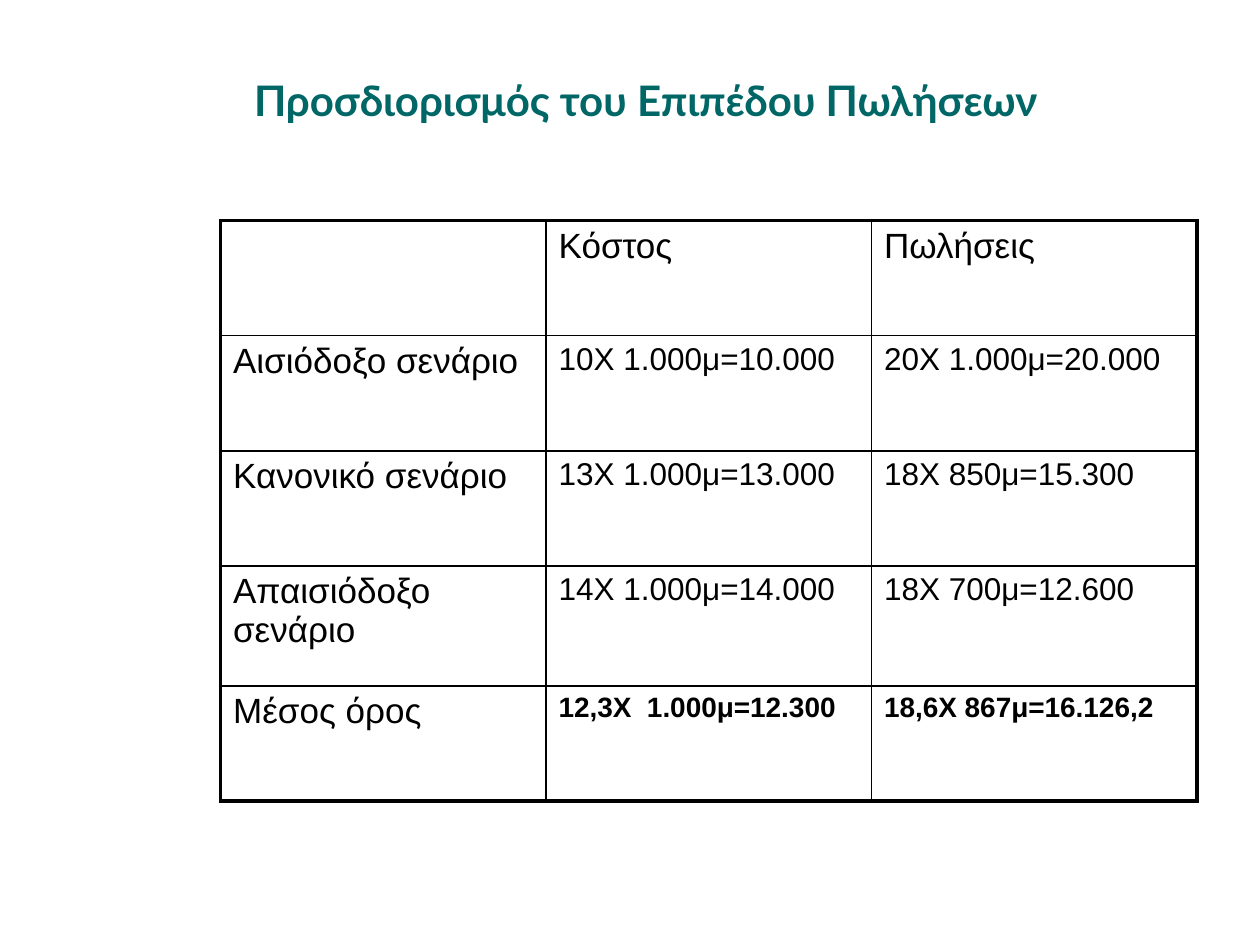
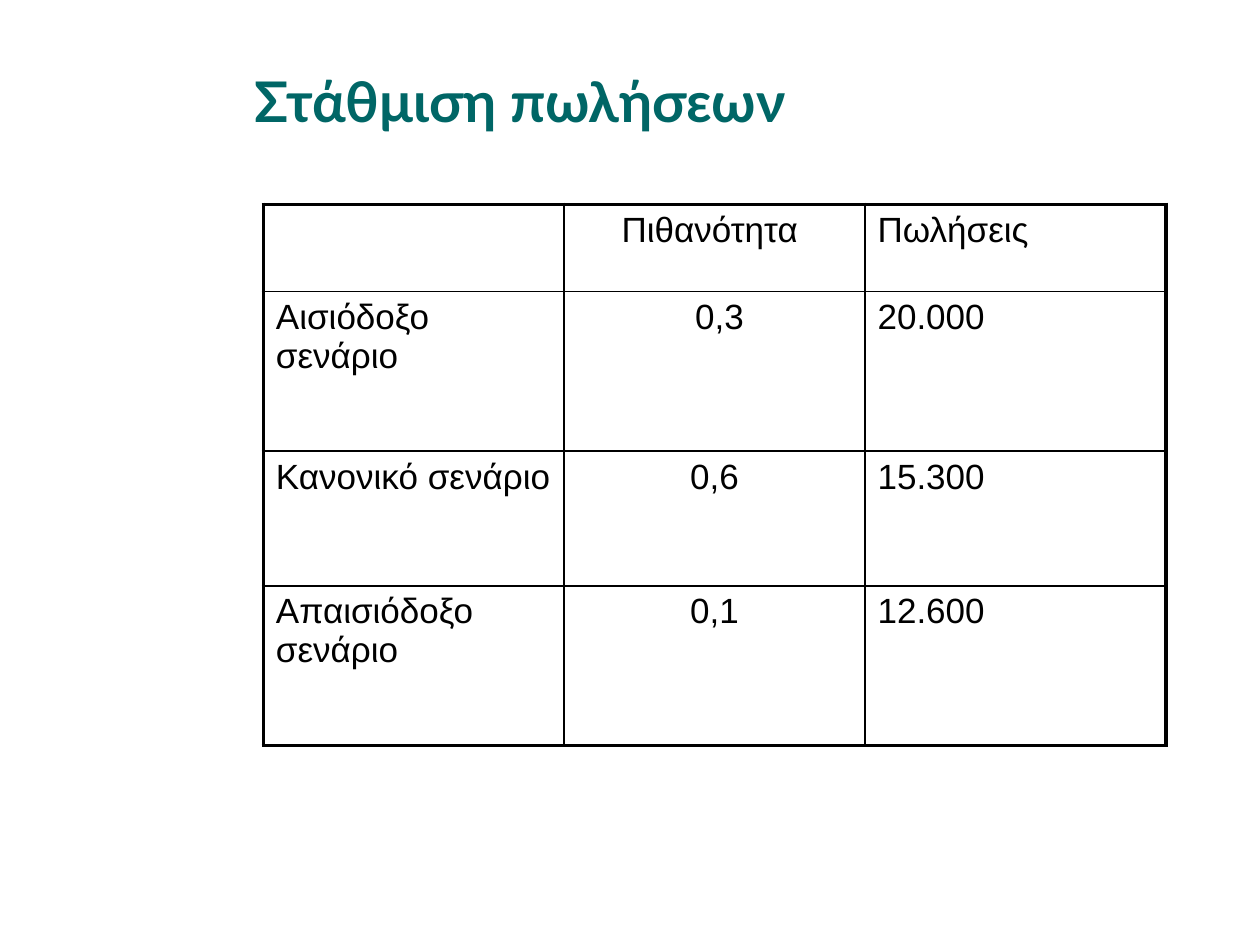
from lxml import etree
from pptx import Presentation
from pptx.dml.color import RGBColor
from pptx.enum import text
from pptx.oxml.ns import qn
from pptx.util import Pt

COLORS = {"title": "006666", "ink": "000000"}
TITLE_BOX = (138, 24, 552, 66)
OUTER, INNER = 2.25, 1
LEFT, CENTER = text.PP_ALIGN.LEFT, text.PP_ALIGN.CENTER

LABEL = {"size": Pt(20), "bold": False}
FIGURE = {"size": Pt(18), "bold": False}
AVERAGE = {"size": Pt(16), "bold": True}


def write(para, words, font_name, color, values, alignment=LEFT):
    para.alignment = alignment
    if not words:
        return
    span = para.add_run()
    span.text = words
    span.font.name = font_name
    span.font.color.rgb = RGBColor.from_string(COLORS[color])
    for name, value in values.items():
        setattr(span.font, name, value)


def add_title(page, box, words, size):
    title = page.shapes.title
    for name, value in zip(("left", "top", "width", "height"), box):
        setattr(title, name, Pt(value))
    frame = title.text_frame
    frame.word_wrap = True
    frame.vertical_anchor = text.MSO_ANCHOR.MIDDLE
    write(frame.paragraphs[0], words, "Lato", "title", {"size": Pt(size), "bold": True})


def add_borders(cell, widths):
    properties = cell._tc.get_or_add_tcPr()
    for side, width in zip("LRTB", widths):
        line = etree.SubElement(properties, qn(f"a:ln{side}"), w=str(Pt(width)))
        fill = etree.SubElement(line, qn("a:solidFill"))
        etree.SubElement(fill, qn("a:srgbClr"), val=COLORS["ink"])
    cell.fill.background()


def add_grid(page, box, heights, rows, style_for, alignments):
    left, top, width = box
    last_row, last_column = len(rows) - 1, len(rows[0]) - 1
    frame = page.shapes.add_table(
        len(rows), len(rows[0]), Pt(left), Pt(top), Pt(width), Pt(sum(heights)))
    table = frame.table
    table.first_row = table.horz_banding = False
    for column in table.columns:
        column.width = Pt(width / len(rows[0]))
    for r, (height, words_in_row) in enumerate(zip(heights, rows)):
        table.rows[r].height = Pt(height)
        for c, words in enumerate(words_in_row):
            cell = table.cell(r, c)
            write(cell.text_frame.paragraphs[0], words, "Arial", "ink",
                  style_for(r, c), alignments[c])
            edges = (c == 0, c == last_column, r == 0, r == last_row)
            add_borders(cell, [OUTER if edge else INNER for edge in edges])


def sales_style(row, column):
    if row == 0 or column == 0:
        return LABEL
    return AVERAGE if row == 4 else FIGURE


def add_sales_page(page):
    add_title(page, TITLE_BOX, "Προσδιορισμός του Επιπέδου Πωλήσεων", 24)
    rows = [
        ("", "Κόστος", "Πωλήσεις"),
        ("Αισιόδοξο σενάριο", "10Χ 1.000μ=10.000", "20Χ 1.000μ=20.000"),
        ("Κανονικό σενάριο", "13Χ 1.000μ=13.000", "18Χ 850μ=15.300"),
        ("Απαισιόδοξο σενάριο", "14Χ 1.000μ=14.000", "18Χ 700μ=12.600"),
        ("Μέσος όρος", "12,3Χ  1.000μ=12.300", "18,6Χ 867μ=16.126,2"),
    ]
    add_grid(page, (126, 126, 558), (65.8, 65.8, 65.8, 68.6, 65.8), rows,
             sales_style, (LEFT, LEFT, LEFT))


def add_weighting_page(page):
    add_title(page, TITLE_BOX, "Στάθμιση πωλήσεων", 32)
    rows = [
        ("", "Πιθανότητα ", "Πωλήσεις"),
        ("Αισιόδοξο σενάριο", " 0,3", "20.000"),
        ("Κανονικό σενάριο", "0,6", "15.300"),
        ("Απαισιόδοξο σενάριο", "0,1", "12.600"),
    ]
    add_grid(page, (150.5, 116.8, 515.7), (49.8, 91.2, 77, 91.2), rows,
             lambda row, column: LABEL, (LEFT, CENTER, LEFT))


def main():
    deck = Presentation()
    deck.slide_width, deck.slide_height = Pt(720), Pt(540)
    for fill_page in (add_sales_page, add_weighting_page):
        fill_page(deck.slides.add_slide(deck.slide_layouts[5]))
    deck.save("out.pptx")


if __name__ == "__main__":
    main()
